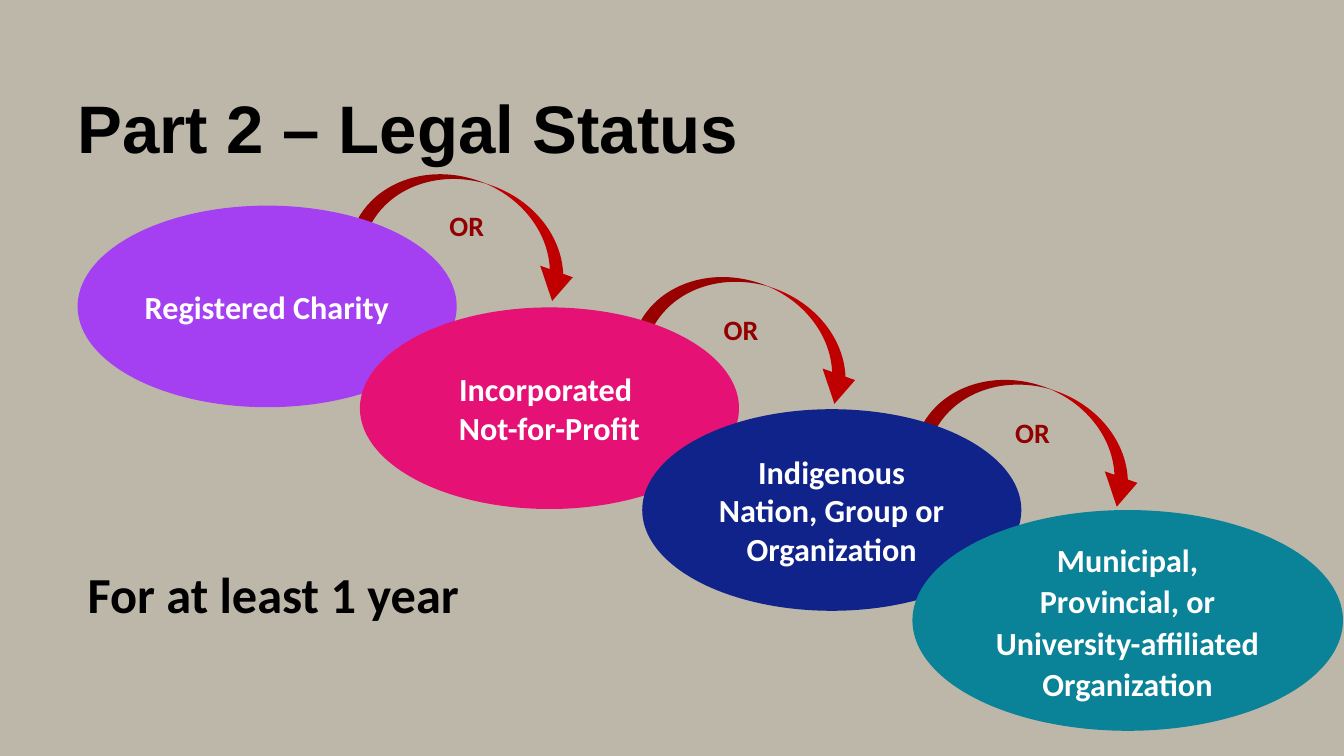
import pptx
import pptx.dml.color
import pptx.enum.shapes
import pptx.enum.text
import pptx.util

SHAPE = pptx.enum.shapes.MSO_SHAPE
ALIGN = pptx.enum.text.PP_ALIGN
ANCHOR = pptx.enum.text.MSO_ANCHOR
AUTOSIZE = pptx.enum.text.MSO_AUTO_SIZE
PX = 9144
COLOURS = {
    "background": "BDB7AA", "arrow": "C00000", "or": "920000",
    "black": "000000", "white": "FFFFFF", "charity": "A540F2",
    "nonprofit": "E51174", "indigenous": "10238B", "public": "0A8297",
}


class StatusSlide:
    """Draws the elements of one slide in a shared style, with lengths in px."""

    def __init__(self, deck):
        self.slide = deck.slides.add_slide(deck.slide_layouts[5])
        self.paint(self.slide.background.fill, "background")

    def paint(self, fill, colour):
        fill.solid()
        fill.fore_color.rgb = self.rgb(colour)

    def rgb(self, colour):
        return pptx.dml.color.RGBColor.from_string(COLOURS[colour])

    def box(self, *lengths):
        return [length * PX for length in lengths]

    def set_text(self, frame, text, size, colour, font="Calibri", frame_format=None, line_format=None):
        frame.text = text
        paragraph = frame.paragraphs[0]
        font_format = {"size": pptx.util.Pt(size), "name": font, "bold": True}
        for target, values in ((frame, {"word_wrap": True, **(frame_format or {})}),
                               (paragraph, line_format or {}),
                               (paragraph.font, font_format)):
            for attribute, value in values.items():
                setattr(target, attribute, value)
        paragraph.font.color.rgb = self.rgb(colour)

    def title(self, text, *place):
        heading = self.slide.shapes.title
        heading.left, heading.top, heading.width, heading.height = self.box(*place)
        self.set_text(heading.text_frame, text, 48, "black", "Arial",
                      {"margin_left": 0, "margin_top": 0, "margin_right": 0,
                       "margin_bottom": 28 * PX, "auto_size": AUTOSIZE.NONE,
                       "vertical_anchor": ANCHOR.MIDDLE},
                      {"alignment": ALIGN.LEFT, "line_spacing": pptx.util.Pt(60)})

    def label(self, text, place, size, colour, frame_format=None, line_format=None):
        note = self.slide.shapes.add_textbox(*self.box(*place))
        self.set_text(note.text_frame, text, size, colour,
                      frame_format=frame_format, line_format=line_format)

    def shape(self, kind, place, colour):
        drawn = self.slide.shapes.add_shape(kind, *self.box(*place))
        drawn.shadow.inherit = False
        self.paint(drawn.fill, colour)
        drawn.line.fill.background()
        return drawn

    def arrow(self, *place):
        arc = self.shape(SHAPE.CURVED_DOWN_ARROW, place, "arrow")
        arc.rotation = 19.5
        for index, value in enumerate((0.16, 0.39, 0.33)):
            arc.adjustments[index] = value

    def ellipse(self, text, place, colour, inset, line_format):
        status = self.shape(SHAPE.OVAL, place, colour)
        self.set_text(status.text_frame, text, 23, "white",
                      frame_format={"vertical_anchor": ANCHOR.MIDDLE,
                                    "margin_left": inset * PX, "margin_right": inset * PX},
                      line_format={"alignment": ALIGN.CENTER, **line_format})


def main():
    deck = pptx.Presentation()
    deck.slide_width, deck.slide_height = 1333 * PX, 750 * PX
    page = StatusSlide(deck)
    page.title("Part 2 – Legal Status", 77, 80, 1036, 116)
    for step in range(3):
        page.arrow(358 + 280 * step, 181 + 102 * step, 227, 88)
    page.label("For at least 1 year", (77, 228, 1123, 396), 36, "black",
               {"vertical_anchor": ANCHOR.BOTTOM}, {"line_spacing": 0.9})

    statuses = (
        ("Registered Charity", "charity", 5),
        ("Incorporated \vNot-for-Profit", "nonprofit", 5),
        ("Indigenous Nation, Group or Organization", "indigenous", 15),
    )
    for step, (text, colour, inset) in enumerate(statuses):
        page.ellipse(text, (77 + 280 * step, 204 + 101 * step, 376, 200), colour, inset, {})
    page.ellipse("Municipal, Provincial, or University-affiliated Organization",
                 (905, 506, 427, 219), "public", 18,
                 {"line_spacing": 1.07, "space_after": pptx.util.Pt(8)})
    for left, top in ((436, 202), (708, 305), (997, 407)):
        page.label("OR", (left, top, 70, 44), 20, "or", {"auto_size": AUTOSIZE.SHAPE_TO_FIT_TEXT})
    deck.save("out.pptx")


if __name__ == "__main__":
    main()
